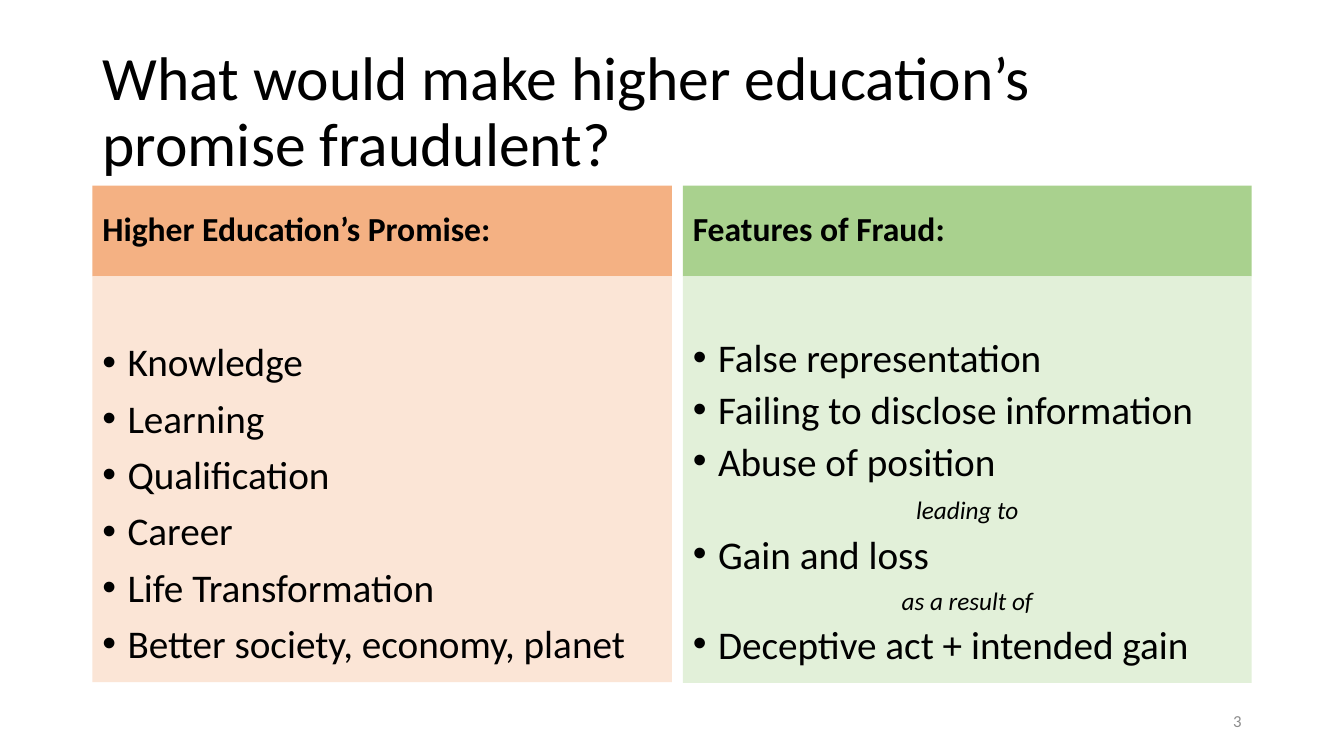
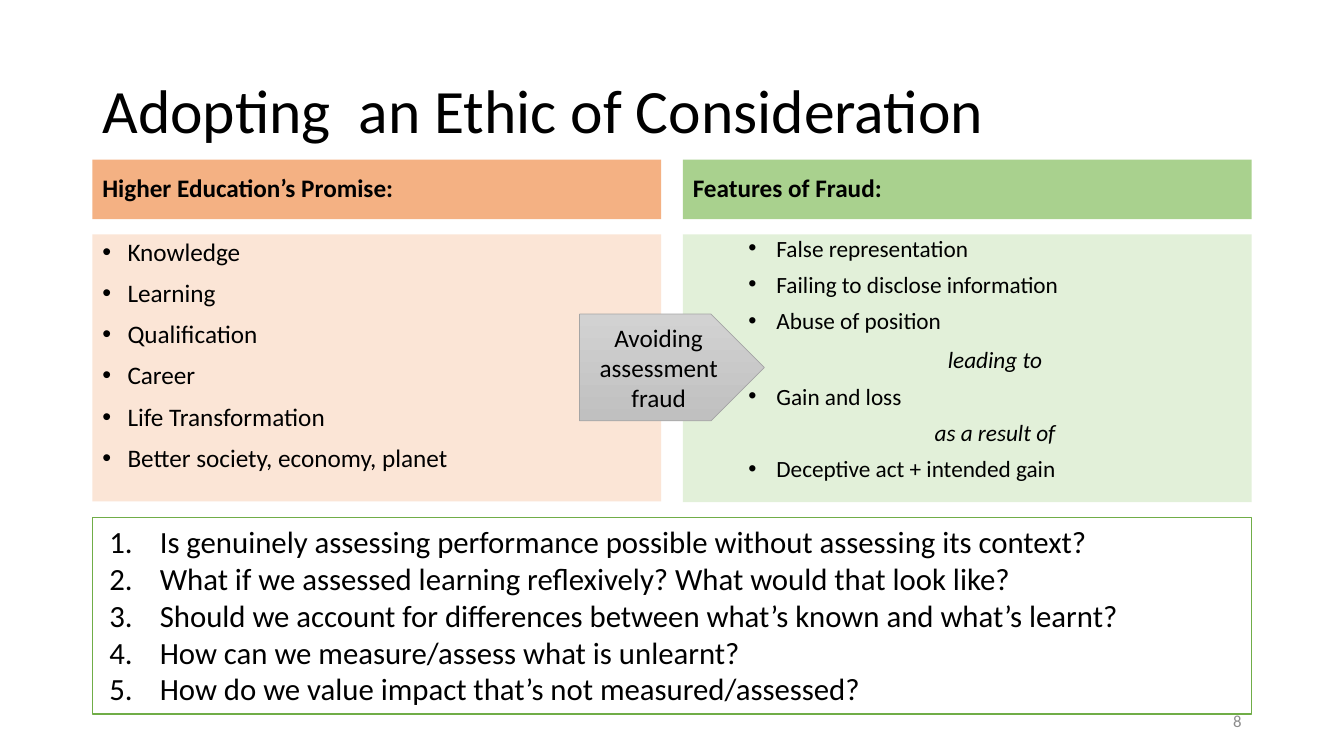
import dataclasses

import lxml.etree
import pptx
import pptx.dml.color
import pptx.enum.shapes
import pptx.enum.text
import pptx.oxml.ns
import pptx.util

SHAPE = pptx.enum.shapes.MSO_SHAPE
ALIGN = pptx.enum.text.PP_ALIGN
ANCHOR = pptx.enum.text.MSO_ANCHOR


@dataclasses.dataclass(frozen=True)
class Theme:
    width: float = 13.33
    height: float = 7.5
    columns: int = 160
    rows: int = 90
    font: str = "Calibri"
    ink: str = "000000"
    muted: str = "8C8C8C"
    paper: str = "FFFFFF"
    question_line: str = "70AD47"
    arrow_line: str = "A5A5A5"
    arrow_shades: tuple = ("D2D2D2", "C0C0C0")
    title_size: float = 44
    question_size: float = 22
    label_size: float = 18
    number_size: float = 12
    space: float = 10


@dataclasses.dataclass(frozen=True)
class Box:
    left: float
    top: float
    width: float
    height: float

    def frame(self):
        column = THEME.width / THEME.columns
        row = THEME.height / THEME.rows
        return dict(
            left=pptx.util.Inches(self.left * column),
            top=pptx.util.Inches(self.top * row),
            width=pptx.util.Inches(self.width * column),
            height=pptx.util.Inches(self.height * row),
        )


@dataclasses.dataclass(frozen=True)
class Topic:
    heading: str
    items: tuple
    strong: str
    pale: str


@dataclasses.dataclass(frozen=True)
class ListStyle:
    size: float
    spacing: float = 0.9
    margin: float = 0.25
    hanging: float = 0.25
    link_size: float = 18
    link_margin: float = 0
    link_hanging: float = 0
    inset_top: float = 0.05


THEME = Theme()
LINKS = ("leading to", "as a result of")
PROMISE = Topic(
    "Higher Education’s Promise:",
    ("Knowledge", "Learning", "Qualification", "Career",
     "Life Transformation", "Better society, economy, planet"),
    "F4B183", "FBE5D6",
)
FRAUD = Topic(
    "Features of Fraud:",
    ("False representation", "Failing to disclose information",
     "Abuse of position", LINKS[0], "Gain and loss", LINKS[1],
     "Deceptive act + intended gain"),
    "A9D18E", "E2F0D9",
)
QUESTIONS = (
    "Is genuinely assessing performance possible without assessing its context?",
    "What if we assessed learning reflexively? What would that look like?",
    "Should we account for differences between what’s known and what’s learnt?",
    "How can we measure/assess what is unlearnt?",
    "How do we value impact that’s not measured/assessed?",
)


def apply(target, values):
    for name, value in values.items():
        setattr(target, name, value)


def rgb(value):
    return pptx.dml.color.RGBColor.from_string(value)


def write(paragraph, text, size, color=THEME.ink, spacing=1.0, before=0,
          align=ALIGN.LEFT, **style):
    apply(paragraph, dict(line_spacing=spacing, alignment=align,
                          space_before=pptx.util.Pt(before)))
    run = paragraph.add_run()
    run.text = text
    apply(run.font, dict(name=THEME.font, size=pptx.util.Pt(size), **style))
    run.font.color.rgb = rgb(color)


def indent(paragraph, margin, hanging, marker=None, **marker_values):
    properties = paragraph._p.get_or_add_pPr()
    properties.set("marL", str(pptx.util.Inches(margin)))
    properties.set("indent", str(-pptx.util.Inches(hanging)))
    if marker:
        qn = pptx.oxml.ns.qn
        lxml.etree.SubElement(properties, qn("a:buFont"),
                              typeface="Arial" if marker == "a:buChar" else "+mj-lt")
        lxml.etree.SubElement(properties, qn(marker), **marker_values)


def paragraphs(frame, texts):
    for index, text in enumerate(texts):
        yield index, text, frame.add_paragraph() if index else frame.paragraphs[0]


def prepare(frame, anchor=ANCHOR.MIDDLE):
    apply(frame, dict(word_wrap=True, vertical_anchor=anchor,
                      auto_size=pptx.enum.text.MSO_AUTO_SIZE.NONE))
    return frame


def panel(slide, box, fill=None, outline=None, kind=SHAPE.RECTANGLE,
          anchor=ANCHOR.MIDDLE, weight=1):
    area = slide.shapes.add_shape(kind, **box.frame())
    area.shadow.inherit = False
    if fill:
        area.fill.solid()
        area.fill.fore_color.rgb = rgb(fill)
    if outline:
        area.line.color.rgb = rgb(outline)
        area.line.width = pptx.util.Pt(weight)
    else:
        area.line.fill.background()
    prepare(area.text_frame, anchor)
    return area


def titled_slide(deck, title, number):
    slide = deck.slides.add_slide(deck.slide_layouts[5])
    heading = slide.shapes.title
    apply(heading, Box(11, 4.8, 138, 17.4).frame())
    write(prepare(heading.text_frame).paragraphs[0], title, THEME.title_size,
          spacing=0.9)
    page = slide.shapes.add_textbox(**Box(113, 83.4, 36, 4.8).frame())
    write(prepare(page.text_frame).paragraphs[0], number, THEME.number_size,
          THEME.muted, align=ALIGN.RIGHT)
    return slide


def topic_column(slide, box, topic, heading_rows, gap, heading_size, style):
    heading = panel(slide, Box(box.left, box.top, box.width, heading_rows),
                    topic.strong)
    write(heading.text_frame.paragraphs[0], topic.heading, heading_size,
          spacing=0.9, bold=True)
    offset = heading_rows + gap
    body = panel(slide, Box(box.left, box.top + offset, box.width,
                            box.height - offset), topic.pale, anchor=ANCHOR.TOP)
    body.text_frame.margin_top = pptx.util.Inches(style.inset_top)
    for index, text, paragraph in paragraphs(body.text_frame, topic.items):
        before = THEME.space if index else 0
        if text in LINKS:
            indent(paragraph, style.link_margin, style.link_hanging)
            write(paragraph, text, style.link_size, before=before,
                  spacing=0.9 if text == LINKS[0] else style.spacing,
                  align=ALIGN.CENTER, italic=True)
        else:
            indent(paragraph, style.margin, style.hanging, "a:buChar", char="•")
            write(paragraph, text, style.size, before=before,
                  spacing=style.spacing)


def question_list(slide, box):
    area = panel(slide, box, THEME.paper, THEME.question_line, anchor=ANCHOR.TOP)
    for _, text, paragraph in paragraphs(area.text_frame, QUESTIONS):
        indent(paragraph, 0.57, 0.5, "a:buAutoNum", type="arabicPeriod")
        write(paragraph, text, THEME.question_size)


def avoidance_arrow(slide, box):
    arrow = panel(slide, box, outline=THEME.arrow_line, kind=SHAPE.PENTAGON,
                  weight=0.5)
    arrow.fill.gradient()
    arrow.fill.gradient_angle = 270
    for position, (stop, shade) in enumerate(
            zip(arrow.fill.gradient_stops, THEME.arrow_shades)):
        stop.color.rgb = rgb(shade)
        stop.position = position
    write(arrow.text_frame.paragraphs[0], "Avoiding assessment fraud",
          THEME.label_size, align=ALIGN.CENTER)


def promise_slide(deck):
    slide = titled_slide(
        deck, "What would make higher education’s promise fraudulent?", "3")
    topic_column(slide, Box(11, 22.1, 69, 59.1), PROMISE, 10.8, 0, 24,
                 ListStyle(28, inset_top=0.66))
    topic_column(slide, Box(81.3, 22.1, 67.7, 59.2), FRAUD, 10.8, 0, 24,
                 ListStyle(28, spacing=0.8, inset_top=0.66))


def consideration_slide(deck):
    slide = titled_slide(deck, "Adopting  an Ethic of Consideration", "8")
    topic_column(slide, Box(11, 19, 67.7, 40.7), PROMISE, 7.1, 1.8,
                 THEME.label_size, ListStyle(18))
    topic_column(slide, Box(81.3, 19, 67.7, 40.8), FRAUD, 7.1, 1.8,
                 THEME.label_size,
                 ListStyle(16.6, spacing=0.8, margin=0.83, hanging=0.28,
                           link_size=16.6, link_margin=0.83, link_hanging=0.28))
    question_list(slide, Box(11, 61.6, 138, 23.4))
    avoidance_arrow(slide, Box(69, 37.4, 22, 12.7))


def main():
    deck = pptx.Presentation()
    apply(deck, dict(slide_width=pptx.util.Inches(THEME.width),
                     slide_height=pptx.util.Inches(THEME.height)))
    promise_slide(deck)
    consideration_slide(deck)
    deck.save("out.pptx")


if __name__ == "__main__":
    main()
